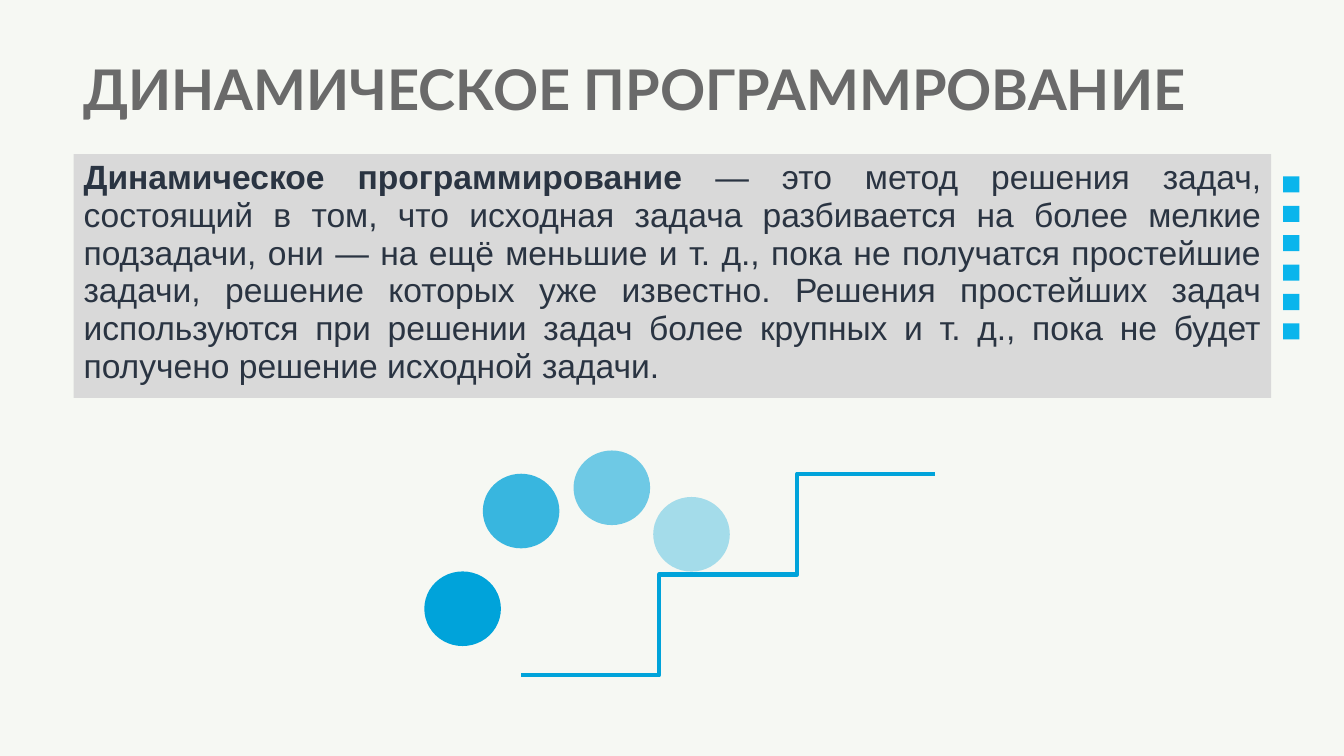
from dataclasses import dataclass
from typing import Any, Optional

from lxml import etree
from pptx import Presentation
from pptx.dml.color import RGBColor
from pptx.enum.shapes import MSO_CONNECTOR, MSO_SHAPE
from pptx.enum.text import MSO_ANCHOR, PP_ALIGN
from pptx.oxml.ns import qn
from pptx.util import Pt

ELBOW = MSO_CONNECTOR.ELBOW
RECTANGLE, OVAL = MSO_SHAPE.RECTANGLE, MSO_SHAPE.OVAL
TOP, MIDDLE = MSO_ANCHOR.TOP, MSO_ANCHOR.MIDDLE
LEFT, JUSTIFY = PP_ALIGN.LEFT, PP_ALIGN.JUSTIFY


@dataclass(frozen=True)
class Theme:
    background: str = "F6F8F3"
    marker: str = "0AB5EC"
    accent: str = "00A3DA"
    panel: str = "D9D9D9"
    title: str = "6A6A6A"
    body: str = "2A3442"
    title_font: str = "Lato"
    body_font: str = "Arial"
    title_size: float = 40
    body_size: float = 24
    stair_width: float = 3


@dataclass(frozen=True)
class Block:
    left: float
    top: float
    width: float
    height: float
    fill: Optional[str] = None
    kind: MSO_SHAPE = RECTANGLE
    opacity: int = 100


@dataclass(frozen=True)
class Phrase:
    text: str
    font: str
    size: float
    color: str
    bold: bool = True


@dataclass(frozen=True)
class Stair:
    left: float
    bottom: float
    width: float
    rise: float


THEME = Theme()

TITLE_BLOCK = Block(52.6, 32.4, 855.4, 67)
TITLE = [Phrase("ДИНАМИЧЕСКОЕ ПРОГРАММРОВАНИЕ", THEME.title_font, THEME.title_size, THEME.title)]
TITLE_FORMAT = {"alignment": LEFT, "line_spacing": 0.9}

BODY_BLOCK = Block(52.6, 110, 855.4, 174.2, THEME.panel)
BODY = [
    Phrase("Динамическое программирование ", THEME.body_font, THEME.body_size, THEME.body),
    Phrase(
        "— это метод решения задач, состоящий в том, что исходная задача разбивается "
        "на более мелкие подзадачи, они — на ещё меньшие и т. д., пока не получатся "
        "простейшие задачи, решение которых уже известно. Решения простейших задач "
        "используются при решении задач более крупных и т. д., пока не будет получено "
        "решение исходной задачи.",
        THEME.body_font, THEME.body_size, THEME.body, False,
    ),
]
BODY_FORMAT = {"alignment": JUSTIFY, "line_spacing": 0.94, "space_before": Pt(10)}

MARKERS = [Block(916.6, 126 + 21 * row, 11.5, 11.5, THEME.marker) for row in range(6)]
BALLS = [
    Block(left, top, 54.7, 53.3, THEME.accent, OVAL, opacity)
    for left, top, opacity in [
        (466.6, 355, 33), (409.7, 321.8, 55), (344.9, 338.4, 77), (303.1, 408.2, 100),
    ]
]
STAIRS = [Stair(372.2 + 98.6 * step, 482.4 - 72 * step, 197.3, 72) for step in (1, 0)]


def set_attributes(target: Any, values: dict[str, Any]) -> None:
    for name, value in values.items():
        setattr(target, name, value)


def draw_block(slide: Any, block: Block) -> Any:
    frame = (Pt(block.left), Pt(block.top), Pt(block.width), Pt(block.height))
    if block.fill is None:
        return slide.shapes.add_textbox(*frame)
    shape = slide.shapes.add_shape(block.kind, *frame)
    shape.shadow.inherit = False
    shape.fill.solid()
    shape.fill.fore_color.rgb = RGBColor.from_string(block.fill)
    shape.line.fill.background()
    if block.opacity < 100:
        color = shape._element.spPr.find(qn("a:solidFill")).find(qn("a:srgbClr"))
        etree.SubElement(color, qn("a:alpha"), val=str(block.opacity * 1000))
    return shape


def write_text(
    shape: Any, phrases: list[Phrase], anchor: MSO_ANCHOR, paragraph_format: dict[str, Any]
) -> None:
    set_attributes(shape.text_frame, {"word_wrap": True, "vertical_anchor": anchor})
    paragraph = shape.text_frame.paragraphs[0]
    set_attributes(paragraph, paragraph_format)
    for phrase in phrases:
        run = paragraph.add_run()
        run.text = phrase.text
        set_attributes(
            run.font, {"name": phrase.font, "size": Pt(phrase.size), "bold": phrase.bold}
        )
        run.font.color.rgb = RGBColor.from_string(phrase.color)


def draw_stair(slide: Any, stair: Stair) -> None:
    connector = slide.shapes.add_connector(
        ELBOW, Pt(stair.left), Pt(stair.bottom),
        Pt(stair.left + stair.width), Pt(stair.bottom - stair.rise),
    )
    connector.line.width = Pt(THEME.stair_width)
    connector.line.color.rgb = RGBColor.from_string(THEME.accent)
    etree.SubElement(connector._element.spPr, qn("a:effectLst"))


def main() -> None:
    presentation = Presentation()
    set_attributes(presentation, {"slide_width": Pt(960), "slide_height": Pt(540)})
    slide = presentation.slides.add_slide(presentation.slide_layouts[6])
    slide.background.fill.solid()
    slide.background.fill.fore_color.rgb = RGBColor.from_string(THEME.background)

    for marker in MARKERS:
        draw_block(slide, marker)
    write_text(draw_block(slide, TITLE_BLOCK), TITLE, MIDDLE, TITLE_FORMAT)
    write_text(draw_block(slide, BODY_BLOCK), BODY, TOP, BODY_FORMAT)
    for stair in STAIRS:
        draw_stair(slide, stair)
    for ball in BALLS:
        draw_block(slide, ball)

    presentation.save("out.pptx")


if __name__ == "__main__":
    main()
